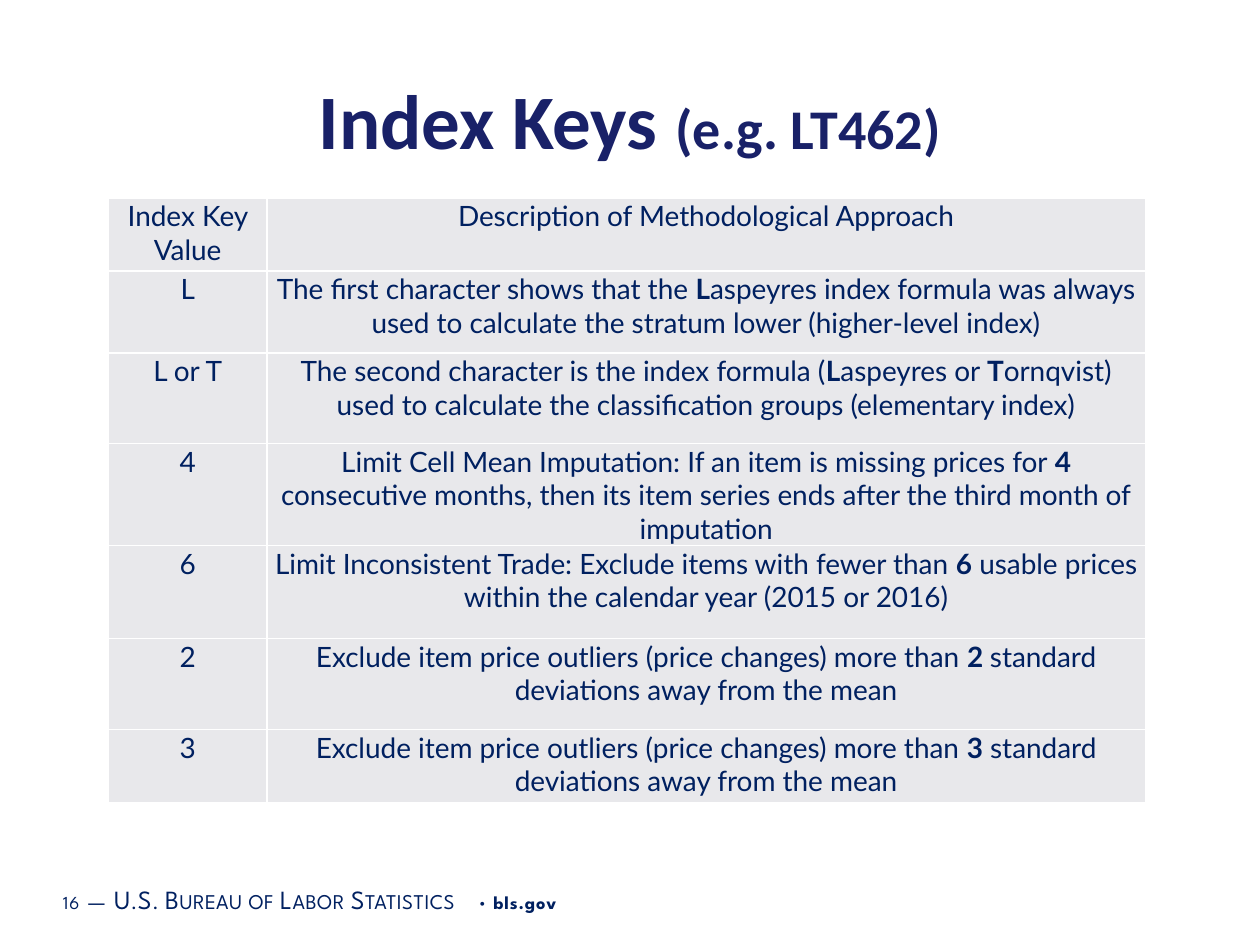
from lxml import etree
from pptx import Presentation
from pptx.dml.color import RGBColor
from pptx.enum.text import MSO_ANCHOR, PP_ALIGN
from pptx.oxml.ns import qn
from pptx.util import Inches, Pt

CENTER = PP_ALIGN.CENTER
LEFT = PP_ALIGN.LEFT
MIDDLE = MSO_ANCHOR.MIDDLE
NAVY = RGBColor(0x00, 0x20, 0x60)
INDIGO = RGBColor(0x19, 0x21, 0x68)
PALE_GRAY = RGBColor(0xE8, 0xE8, 0xEB)
WHITE = RGBColor(0xFF, 0xFF, 0xFF)

GRID_COLUMNS = 100
GRID_ROWS = 75

TITLE = {"name": "Calibri", "size": Pt(44), "bold": True}
SUBTITLE = {**TITLE, "size": Pt(32)}
BODY = {"name": "Lato", "size": Pt(16), "bold": False}
STRONG = {**BODY, "bold": True}
FOOTER = {"name": "League Spartan", "size": Pt(10.5), "bold": False}
FOOTER_STRONG = {**FOOTER, "bold": True}
FOOTER_GAP = {**FOOTER, "size": Pt(16)}
FOOTER_CAPS = {**FOOTER, "size": Pt(15)}
WIDE = {"spc": "50"}
SMALL_CAPS = {"spc": "30", "cap": "small"}

OUTLIERS = "Exclude item price outliers (price changes) more than "
DEVIATIONS = "standard deviations away from the mean"
INDEX_KEYS = [
    ("Index Key Value", [("Description of Methodological Approach", BODY)]),
    ("L", [
        ("The first character shows that the ", BODY),
        ("L", STRONG),
        ("aspeyres index formula was always used to calculate "
         "the stratum lower (higher-level index)", BODY),
    ]),
    ("L or T", [
        ("The second character is the index formula (", BODY),
        ("L", STRONG),
        ("aspeyres or ", BODY),
        ("T", STRONG),
        ("ornqvist) used to calculate the classification groups "
         "(elementary index)", BODY),
    ]),
    ("4", [
        ("Limit Cell Mean Imputation: If an item is missing prices for ", BODY),
        ("4", STRONG),
        (" consecutive months, then its item series ends after "
         "the third month of imputation", BODY),
    ]),
    ("6", [
        ("Limit Inconsistent Trade: Exclude items with fewer than ", BODY),
        ("6", STRONG),
        (" usable prices within the calendar year (2015 or 2016)", BODY),
    ]),
    ("2", [(OUTLIERS, BODY), ("2 ", STRONG), (DEVIATIONS, BODY)]),
    ("3", [(OUTLIERS, BODY), ("3", STRONG), (" " + DEVIATIONS, BODY)]),
]


class SlideBuilder:
    def __init__(self, presentation):
        self.slide = presentation.slides.add_slide(presentation.slide_layouts[6])
        self.column = presentation.slide_width / GRID_COLUMNS
        self.row = presentation.slide_height / GRID_ROWS

    def place(self, left, top, width, height):
        return (round(left * self.column), round(top * self.row),
                round(width * self.column), round(height * self.row))

    def fill_text(self, text_frame, runs, color, alignment):
        paragraph = text_frame.paragraphs[0]
        paragraph.alignment = alignment
        for text, style, *extras in runs:
            run = paragraph.add_run()
            run.text = text
            for attribute, value in style.items():
                setattr(run.font, attribute, value)
            run.font.color.rgb = color
            for extra in extras:
                for attribute, value in extra.items():
                    run.font._element.set(attribute, value)

    def add_text(self, box, runs, color, alignment):
        text_frame = self.slide.shapes.add_textbox(*self.place(*box)).text_frame
        text_frame.word_wrap = True
        text_frame.vertical_anchor = MIDDLE
        text_frame.margin_left = text_frame.margin_right = round(0.7 * self.column)
        text_frame.margin_top = text_frame.margin_bottom = round(0.4 * self.row)
        self.fill_text(text_frame, runs, color, alignment)

    def add_borders(self, cell):
        properties = cell._tc.get_or_add_tcPr()
        for position, side in enumerate(("lnL", "lnR", "lnT", "lnB")):
            line = etree.Element(qn(f"a:{side}"), w=str(Pt(1)))
            fill = etree.SubElement(line, qn("a:solidFill"))
            etree.SubElement(fill, qn("a:srgbClr"), val=str(WHITE))
            properties.insert(position, line)

    def style_cell(self, cell, runs):
        cell.fill.solid()
        cell.fill.fore_color.rgb = PALE_GRAY
        margin = round(0.1 * self.column)
        cell.margin_left = cell.margin_right = cell.margin_top = margin
        cell.margin_bottom = 0
        self.fill_text(cell.text_frame, runs, NAVY, CENTER)
        self.add_borders(cell)

    def add_table(self, box, widths, heights, entries):
        table = self.slide.shapes.add_table(
            len(heights), len(widths), *self.place(*box)).table
        table.first_row = table.horz_banding = False
        for column, width in zip(table.columns, widths):
            column.width = round(width * self.column)
        for row, height, (key, description) in zip(table.rows, heights, entries):
            row.height = round(height * self.row)
            for cell, runs in zip(row.cells, ([(key, BODY)], description)):
                self.style_cell(cell, runs)


def main():
    presentation = Presentation()
    presentation.slide_width = Inches(10)
    presentation.slide_height = Inches(7.5)
    builder = SlideBuilder(presentation)
    builder.add_text((4.3, 69.3, 63.3, 4), [
        ("16", FOOTER, WIDE),
        (" ", FOOTER_GAP, WIDE),
        ("—", FOOTER_CAPS, SMALL_CAPS),
        (" ", FOOTER_GAP, WIDE),
        ("U.S. Bureau of Labor Statistics", FOOTER_CAPS, SMALL_CAPS),
        (" • ", FOOTER, WIDE),
        ("bls.gov", FOOTER_STRONG, WIDE),
    ], NAVY, LEFT)
    builder.add_text((5, 5, 90, 8.8), [
        ("Index Keys ", TITLE),
        ("(e.g. LT462)", SUBTITLE),
    ], INDIGO, CENTER)
    builder.add_table((8.6, 15.7, 82.3, 48), (12.6, 69.7),
                      (5.8, 6.5, 7.2, 7, 7.4, 7.2, 5.8), INDEX_KEYS)
    presentation.save("out.pptx")


if __name__ == "__main__":
    main()
